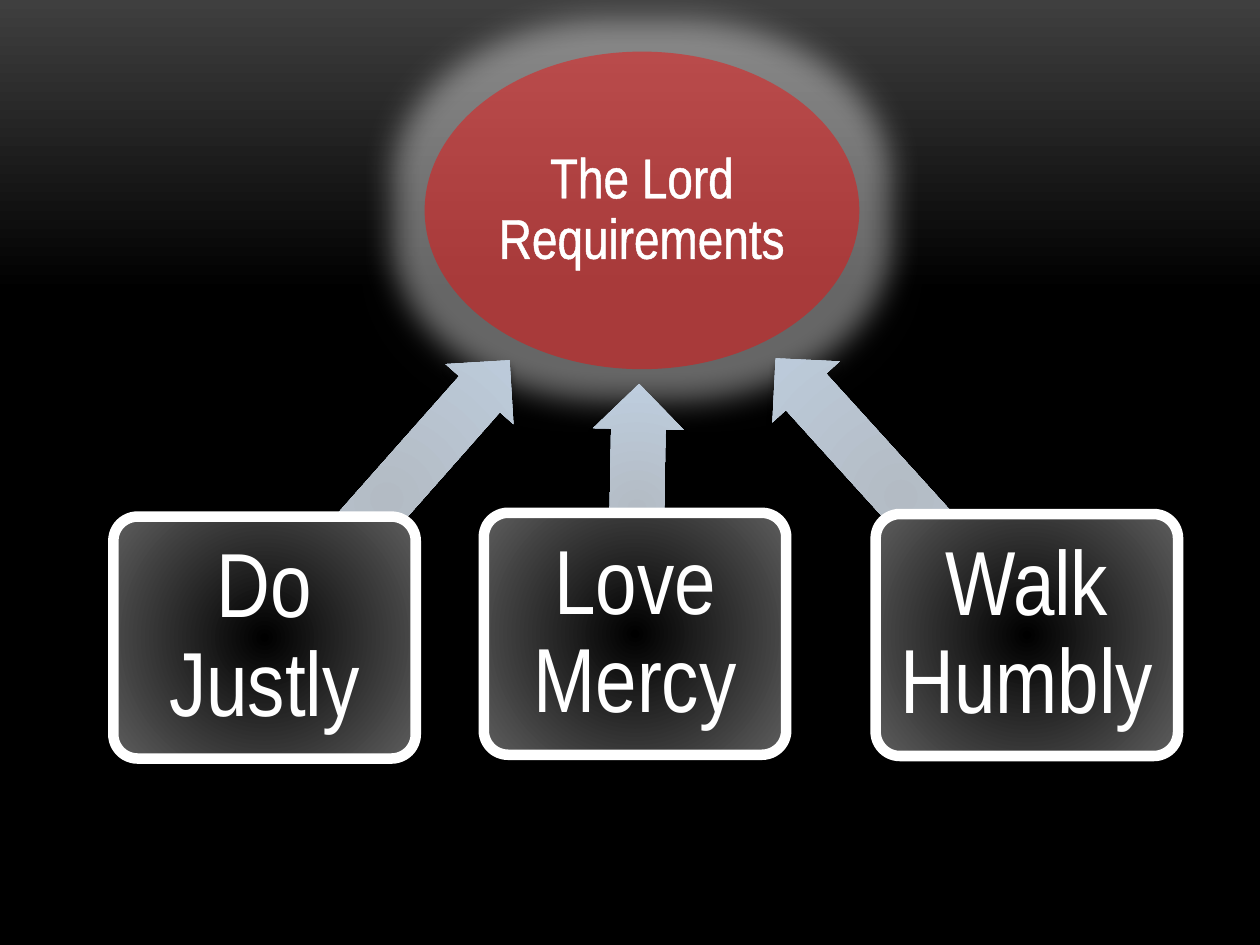
import lxml.etree
import pptx
import pptx.dml.color
import pptx.enum.shapes
import pptx.enum.text
import pptx.oxml.ns
import pptx.util

SHAPES = pptx.enum.shapes.MSO_SHAPE


def color(code):
    return pptx.dml.color.RGBColor.from_string(code)


def add_xml(parent, tag, **attributes):
    return lxml.etree.SubElement(parent, pptx.oxml.ns.qn(tag), attributes)


def add_color(parent, code, alpha=100):
    node = add_xml(parent, "a:srgbClr", val=code)
    add_xml(node, "a:alpha", val=str(alpha * 1000))


class Diagram:
    """Style and current page; lengths are cells of a 10 by 7.5 grid."""

    font = "Arial Narrow"
    white = "FFFFFF"
    box_colors = ("000000", "5E5E5E")
    arrow_colors = ("B3BBC4", "BFCFE0")
    box_size = (2.4, 1.92)
    arrow_height = 0.72

    def __init__(self, deck):
        self.cell = deck.slide_width / 10
        self.page = deck.slides.add_slide(deck.slide_layouts[6])

    def gradient(self, fill, colors, end=1):
        fill.gradient()
        for stop, code, position in zip(fill.gradient_stops, colors, (0, end)):
            stop.color.rgb = color(code)
            stop.position = position

    def background(self, top, bottom, end):
        fill = self.page.background.fill
        self.gradient(fill, (top, bottom), end)
        fill.gradient_angle = 270

    def shape(self, kind, left, top, width, height):
        lengths = [round(n * self.cell) for n in (left, top, width, height)]
        shape = self.page.shapes.add_shape(kind, *lengths)
        shape.shadow.inherit = False
        shape.line.fill.background()
        return shape

    def effects(self, shape):
        return shape._element.spPr.find(pptx.oxml.ns.qn("a:effectLst"))

    def radial_fill(self, shape, colors):
        self.gradient(shape.fill, colors)
        grad = shape._element.spPr.find(pptx.oxml.ns.qn("a:gradFill"))
        grad.remove(grad.find(pptx.oxml.ns.qn("a:lin")))
        circle = add_xml(grad, "a:path", path="circle")
        add_xml(circle, "a:fillToRect", **dict.fromkeys("ltrb", "100000"))

    def soft_shadow(self, shape):
        shadow = add_xml(self.effects(shape), "a:outerShdw", blurRad="50800",
                         dist="43180", dir="5400000", rotWithShape="0")
        add_color(shadow, "000000", 40)

    def label(self, shape, text, size, inset):
        frame = shape.text_frame
        frame.text = text
        frame.word_wrap = True
        frame.vertical_anchor = pptx.enum.text.MSO_ANCHOR.MIDDLE
        margin = round(inset * self.cell)
        frame.margin_left = frame.margin_right = margin
        frame.margin_top = frame.margin_bottom = margin
        para = frame.paragraphs[0]
        para.alignment = pptx.enum.text.PP_ALIGN.CENTER
        para.line_spacing = 0.9
        span = para.runs[0]
        span.font.name = self.font
        span.font.size = pptx.util.Pt(size)
        span.font.color.rgb = color(self.white)
        return span

    def goal(self, text, left, top, width, height):
        oval = self.shape(SHAPES.OVAL, left, top, width, height)
        oval.fill.solid()
        oval.fill.fore_color.rgb = color("FF0000")
        fill_color = oval._element.spPr.find(".//" + pptx.oxml.ns.qn("a:srgbClr"))
        add_xml(fill_color, "a:alpha", val="43000")
        glow = add_xml(self.effects(oval), "a:glow", rad=str(pptx.util.Inches(0.5)))
        add_color(glow, self.white, 40)
        span = self.label(oval, text, 32, 0.02)
        # Thin white outline around the letters
        outline = lxml.etree.Element(pptx.oxml.ns.qn("a:ln"), w="18415")
        add_color(add_xml(outline, "a:solidFill"), self.white)
        span.font._element.insert(0, outline)

    def arrow(self, left, top, width, angle):
        arrow = self.shape(SHAPES.LEFT_ARROW, left, top, width, self.arrow_height)
        arrow.adjustments[0] = 0.6
        arrow.adjustments[1] = 0.5
        arrow.rotation = angle
        self.radial_fill(arrow, self.arrow_colors)
        self.soft_shadow(arrow)

    def box(self, text, left, top):
        box = self.shape(SHAPES.ROUNDED_RECTANGLE, left, top, *self.box_size)
        box.adjustments[0] = 0.1
        self.radial_fill(box, self.box_colors)
        box.line.color.rgb = color(self.white)
        box.line.width = pptx.util.Pt(6)
        self.soft_shadow(box)
        self.label(box, text, 52, 0.11)


def main():
    deck = pptx.Presentation()
    deck.slide_width = pptx.util.Inches(10)
    deck.slide_height = pptx.util.Inches(7.5)
    diagram = Diagram(deck)
    diagram.background("3F3F3F", "000000", 0.31)

    # The central idea
    diagram.goal("The Lord Requirements", 3.37, 0.41, 3.45, 2.52)

    # Each requirement: its arrow (left, top, width, angle), then its box
    requirements = [
        ("Do Justly", (0.9, 4.1), (1.6, 3.6, 2.94, 131.5)),
        ("Love Mercy", (3.84, 4.07), (4.06, 3.68, 1.99, 91)),
        ("Walk Humbly", (6.95, 4.08), (5.67, 3.58, 2.96, 47.8)),
    ]
    for text, corner, arrow in requirements:
        diagram.arrow(*arrow)
        diagram.box(text, *corner)

    deck.save("out.pptx")


if __name__ == "__main__":
    main()
